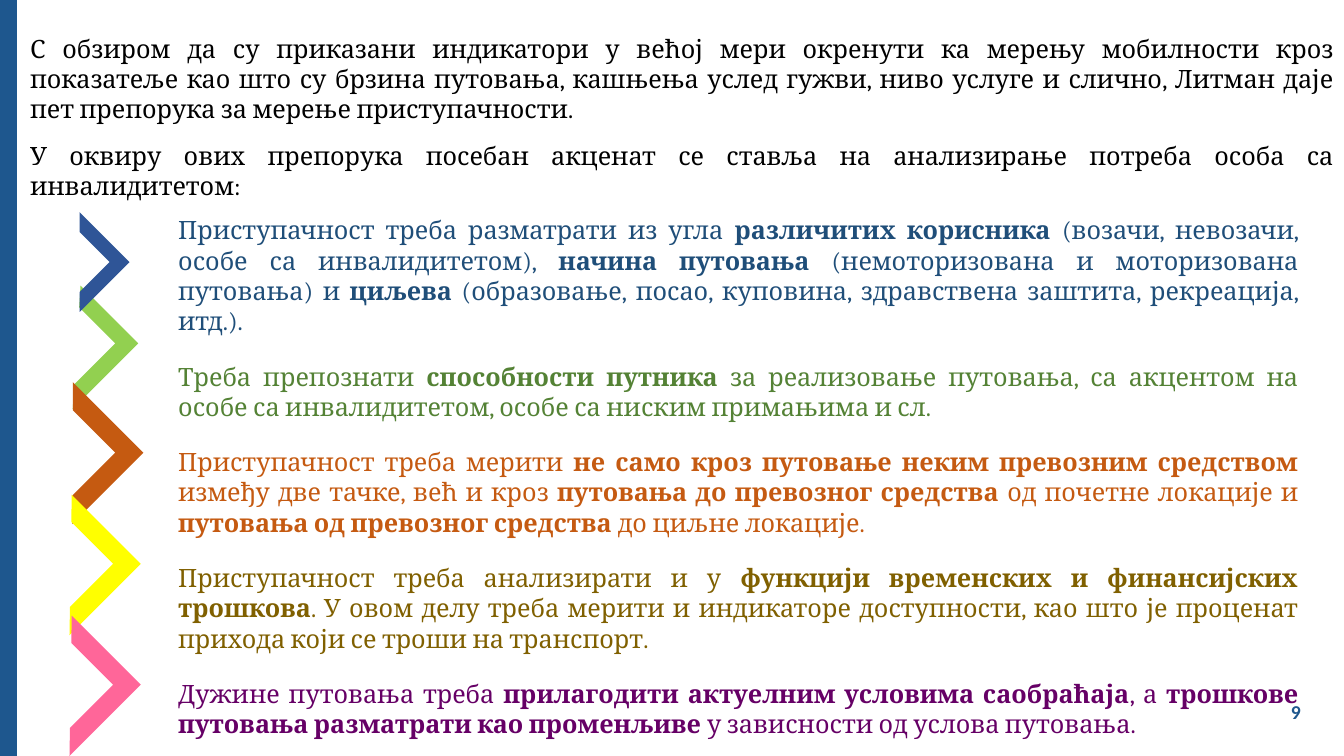
from pptx import Presentation
from pptx.dml.color import RGBColor
from pptx.enum import shapes, text
from pptx.util import Pt


def paint(fmt, hue):
    fmt.solid()
    fmt.fore_color.rgb = RGBColor.from_string(hue)


def write(paras, box, hues, font="Cambria", size=18, gap=0,
          align=text.PP_ALIGN.JUSTIFY, anchor=text.MSO_ANCHOR.TOP):
    frame = page.shapes.add_textbox(*map(Pt, box)).text_frame
    frame.word_wrap = True
    frame.vertical_anchor = anchor
    for i, (words, hue) in enumerate(zip(paras, hues)):
        para = frame.add_paragraph() if i else frame.paragraphs[0]
        para.alignment = align
        para.space_before = Pt(gap if i else 0)
        for j, part in enumerate(words.split("**")):
            if part:
                run = para.add_run()
                run.text = part
                run.font.name = font
                run.font.size = Pt(size)
                run.font.bold = j % 2 == 1
                paint(run.font.fill, hue)


deck = Presentation()
deck.slide_width, deck.slide_height = Pt(960), Pt(540)
page = deck.slides.add_slide(deck.slide_layouts[6])

bar = page.shapes.add_shape(shapes.MSO_SHAPE.RECTANGLE, 0, 0, Pt(12.2), Pt(540))
bar.shadow.inherit = False
paint(bar.fill, "1E578E")
bar.line.fill.background()

write(["**9**"], (907.2, 493.9, 36.7, 28.8), ["1E578E"], font="Calibri", size=14,
      align=text.PP_ALIGN.CENTER, anchor=text.MSO_ANCHOR.MIDDLE)

intro = [
    "С обзиром да су приказани индикатори у већој мери окренути ка мерењу мобилности кроз показатеље као што су брзина путовања, кашњења услед гужви, ниво услуге и слично, Литман даје пет препорука за мерење приступачности. ",
    "У оквиру ових препорука посебан акценат се ставља на анализирање потреба особа са инвалидитетом:",
]
write(intro, (14.4, 30.2, 945.4, 106.6), ["000000"] * 2, gap=12,
      anchor=text.MSO_ANCHOR.MIDDLE)

marks = [
    (21.6, 218.9, 66.2, 58.3, "92D050"),
    (31.7, 162, 50.4, 50.4, "2F5597"),
    (15.8, 288, 72, 71.3, "C55A11"),
    (14.4, 368.6, 72, 69.8, "FFFF00"),
    (14.4, 455, 72, 69.8, "FF6699"),
]
for *box, hue in marks:
    mark = page.shapes.add_shape(shapes.MSO_SHAPE.HALF_FRAME, *map(Pt, box))
    mark.adjustments[0] = 0.2
    mark.adjustments[1] = 0.2
    mark.rotation = 135
    mark.shadow.inherit = False
    paint(mark.fill, hue)
    mark.line.fill.background()

advice = {
    "1F4E79": "Приступачност треба разматрати из угла **различитих корисника** (возачи, невозачи, особе са инвалидитетом), **начина путовања** (немоторизована и моторизована путовања) и **циљева** (образовање, посао, куповина, здравствена заштита, рекреација, итд.).",
    "548235": "Треба препознати **способности путника** за реализовање путовања, са акцентом на особе са инвалидитетом, особе са ниским примањима и сл.",
    "C55A11": "Приступачност треба мерити **не само кроз путовање неким превозним средством** између две тачке, већ и кроз **путовања до превозног средства** од почетне локације и **путовања од превозног средства** до циљне локације.",
    "806000": "Приступачност треба анализирати и у **функцији временских и финансијских трошкова**. У овом делу треба мерити и индикаторе доступности, као што је проценат прихода који се троши на транспорт.",
    "660066": "Дужине путовања треба **прилагодити актуелним условима саобраћаја**, а **трошкове путовања разматрати као променљиве** у зависности од услова путовања.",
}
write(advice.values(), (120.2, 149.8, 814.3, 363.6), advice, gap=18)

deck.save("out.pptx")
